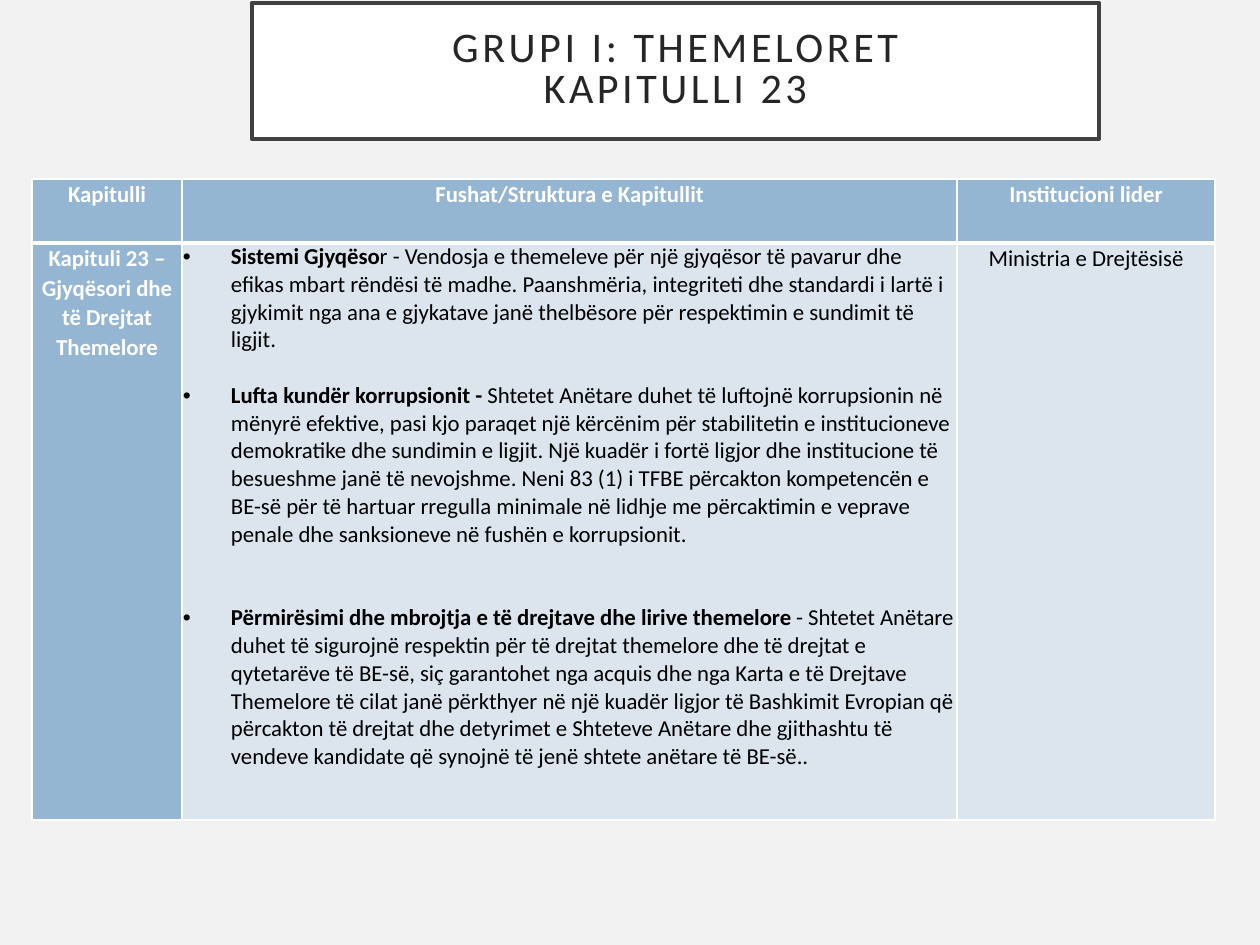
from dataclasses import dataclass

from lxml import etree
from pptx import Presentation
from pptx import util as u
from pptx.dml.color import RGBColor
from pptx.enum import text
from pptx.oxml import ns

PX_PER_INCH = 126


def px(n: int) -> u.Emu:
    return u.Emu(round(n * 914400 / PX_PER_INCH))


@dataclass(frozen=True)
class Theme:
    font: str = "Calibri"
    page: str = "F2F2F2"
    white: str = "FFFFFF"
    black: str = "000000"
    title_text: str = "262626"
    title_line: str = "404040"
    header: str = "94B6D2"
    body: str = "DCE5EE"
    title_size: float = 24.1
    table_size: float = 13
    thin: float = 0.96
    thick: float = 3


@dataclass(frozen=True)
class Topic:
    name: str
    detail: str
    before: int = 0  # points
    after: int = 0


THEME = Theme()
TITLE = ["GRUPI I: THEMELORET", "KAPITULLI 23"]
HEADERS = ["Kapitulli", "Fushat/Struktura e Kapitullit", "Institucioni lider"]
CHAPTER = "Kapituli 23 – Gjyqësori dhe të Drejtat Themelore"
LEADER = "Ministria e Drejtësisë"
TOPICS = [
    Topic("Sistemi Gjyqëso",
          "r - Vendosja e themeleve për një gjyqësor të pavarur dhe efikas mbart "
          "rëndësi të madhe. Paanshmëria, integriteti dhe standardi i lartë i gjykimit "
          "nga ana e gjykatave janë thelbësore për respektimin e sundimit të ligjit."),
    Topic("Lufta kundër korrupsionit - ",
          "Shtetet Anëtare duhet të luftojnë korrupsionin në mënyrë efektive, pasi kjo "
          "paraqet një kërcënim për stabilitetin e institucioneve demokratike dhe "
          "sundimin e ligjit. Një kuadër i fortë ligjor dhe institucione të besueshme "
          "janë të nevojshme. Neni 83 (1) i TFBE përcakton kompetencën e BE-së për të "
          "hartuar rregulla minimale në lidhje me përcaktimin e veprave penale dhe "
          "sanksioneve në fushën e korrupsionit.", before=16),
    Topic("Përmirësimi dhe mbrojtja e të drejtave dhe lirive themelore ",
          "- Shtetet Anëtare duhet të sigurojnë respektin për të drejtat themelore dhe "
          "të drejtat e qytetarëve të BE-së, siç garantohet nga acquis dhe nga Karta e "
          "të Drejtave Themelore të cilat janë përkthyer në një kuadër ligjor të "
          "Bashkimit Evropian që përcakton të drejtat dhe detyrimet e Shteteve Anëtare "
          "dhe gjithashtu të vendeve kandidate që synojnë të jenë shtete anëtare të "
          "BE-së..", before=32, after=16),
]


def rgb(color: str) -> RGBColor:
    return RGBColor.from_string(color)


def format_run(r, size: float, color: str, bold: bool) -> None:
    r.font.name = THEME.font
    r.font.size = u.Pt(size)
    r.font.bold = bold
    r.font.color.rgb = rgb(color)


def set_margins(target, margin_x: int, margin_y: int) -> None:
    target.margin_left = target.margin_right = px(margin_x)
    target.margin_top = target.margin_bottom = px(margin_y)


def add_title(s) -> None:
    sp = s.shapes.title
    sp.left, sp.top, sp.width, sp.height = px(252), px(3), px(847), px(136)
    sp.fill.solid()
    sp.fill.fore_color.rgb = rgb(THEME.white)
    sp.line.color.rgb = rgb(THEME.title_line)
    sp.line.width = u.Pt(2.5)
    tf = sp.text_frame
    tf.text = "\n".join(TITLE)
    tf.word_wrap = True
    tf.auto_size = text.MSO_AUTO_SIZE.NONE
    tf.vertical_anchor = text.MSO_ANCHOR.MIDDLE
    set_margins(tf, 25, 25)
    for p in tf.paragraphs:
        p.alignment = text.PP_ALIGN.CENTER
        p.line_spacing = 0.8
        p.space_before = u.Pt(0)
        for r in p.runs:
            format_run(r, THEME.title_size, THEME.title_text, False)
            r.font._element.set("spc", "200")


def style_cell(cell, fill: str, bottom: float) -> None:
    """Set margins, white borders and fill."""
    set_margins(cell, 1, 0)
    tc_pr = cell._tc.get_or_add_tcPr()
    widths = {"L": THEME.thin, "R": THEME.thin, "T": THEME.thin, "B": bottom}
    for side, width in widths.items():
        ln = etree.SubElement(tc_pr, ns.qn(f"a:ln{side}"), w=str(u.Pt(width)))
        solid = etree.SubElement(ln, ns.qn("a:solidFill"))
        etree.SubElement(solid, ns.qn("a:srgbClr"), val=THEME.white)
    cell.fill.solid()
    cell.fill.fore_color.rgb = rgb(fill)


def write_label(cell, label: str, color: str, bold: bool) -> None:
    cell.text_frame.text = label
    p = cell.text_frame.paragraphs[0]
    p.alignment = text.PP_ALIGN.CENTER
    p.line_spacing = 1.07
    p.space_after = u.Pt(8)
    format_run(p.runs[0], THEME.table_size, color, bold)


def add_bullet(p) -> None:
    p_pr = p._p.get_or_add_pPr()
    p_pr.set("marL", str(px(48)))
    p_pr.set("indent", str(-px(48)))
    color = etree.SubElement(p_pr, ns.qn("a:buClr"))
    etree.SubElement(color, ns.qn("a:srgbClr"), val=THEME.black)
    etree.SubElement(p_pr, ns.qn("a:buFont"), typeface="Arial")
    etree.SubElement(p_pr, ns.qn("a:buChar"), char="•")


def write_topics(cell, topics: list[Topic]) -> None:
    tf = cell.text_frame
    for i, topic in enumerate(topics):
        p = tf.add_paragraph() if i else tf.paragraphs[0]
        add_bullet(p)
        if topic.before:
            p.space_before = u.Pt(topic.before)
        p.space_after = u.Pt(topic.after)
        for words, bold in ((topic.name, True), (topic.detail, False)):
            r = p.add_run()
            r.text = words
            format_run(r, THEME.table_size, THEME.black, bold)


def add_chapter_table(s) -> None:
    widths, heights = [150, 775, 258], [64, 577]
    table = s.shapes.add_table(len(heights), len(widths), px(32), px(179),
                               px(sum(widths)), px(sum(heights))).table
    table.horz_banding = False
    for column, width in zip(table.columns, widths):
        column.width = px(width)
    for row, height in zip(table.rows, heights):
        row.height = px(height)

    # Header row
    for i, label in enumerate(HEADERS):
        style_cell(table.cell(0, i), THEME.header, THEME.thick)
        write_label(table.cell(0, i), label, THEME.white, True)

    # Chapter row
    chapter, topics, leader = (table.cell(1, i) for i in range(len(widths)))
    for cell, fill in ((chapter, THEME.header), (topics, THEME.body), (leader, THEME.body)):
        style_cell(cell, fill, THEME.thin)
    for cell in (chapter, topics, leader):
        top = cell._tc.tcPr.find(ns.qn("a:lnT"))
        top.set("w", str(u.Pt(THEME.thick)))  # shared with the header's bottom edge
    write_label(chapter, CHAPTER, THEME.white, True)
    write_topics(topics, TOPICS)
    write_label(leader, LEADER, THEME.black, False)


def main() -> None:
    prs = Presentation()
    prs.slide_width, prs.slide_height = px(1260), px(945)
    s = prs.slides.add_slide(prs.slide_layouts[5])
    s.background.fill.solid()
    s.background.fill.fore_color.rgb = rgb(THEME.page)
    add_chapter_table(s)
    add_title(s)
    prs.save("out.pptx")


if __name__ == "__main__":
    main()
